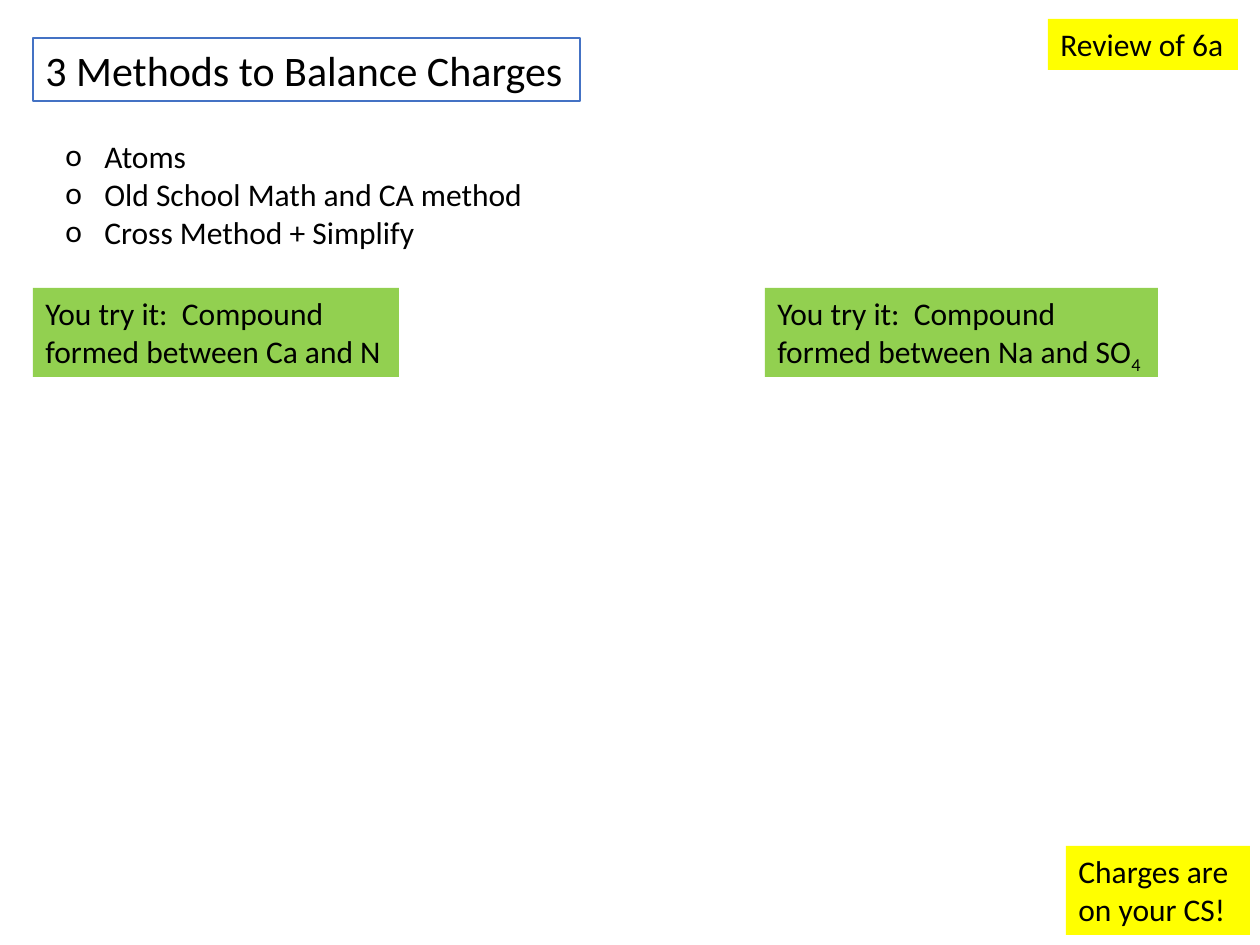
from lxml.etree import SubElement
from pptx import Presentation
from pptx.dml.color import RGBColor
from pptx.enum.shapes import MSO_SHAPE
from pptx.enum.text import MSO_ANCHOR, MSO_AUTO_SIZE, PP_ALIGN
from pptx.oxml.ns import qn
from pptx.util import Pt

PX = 914400 / 126


def color(value):
    return RGBColor.from_string(value)


def add_text(page, text, at, size=18, fill=None, line=None, wrap=False, bullet=None, subscript=None):
    bounds = [round(length * PX) for length in at]
    if fill:
        box = page.shapes.add_shape(MSO_SHAPE.RECTANGLE, *bounds)
        box.shadow.inherit = False
        box.fill.solid()
        box.fill.fore_color.rgb = color(fill)
        if line:
            box.line.color.rgb = color(line)
            box.line.width = Pt(1)
        else:
            box.line.fill.background()
    else:
        box = page.shapes.add_textbox(*bounds)
    frame = box.text_frame
    frame.text = text
    frame.word_wrap = wrap
    frame.auto_size = MSO_AUTO_SIZE.SHAPE_TO_FIT_TEXT
    frame.vertical_anchor = MSO_ANCHOR.TOP
    if subscript:
        span = frame.paragraphs[-1].add_run()
        span.text = subscript
        span._r.get_or_add_rPr().set("baseline", "-25000")
    for para in frame.paragraphs:
        para.alignment = PP_ALIGN.LEFT
        if bullet:
            properties = para._p.get_or_add_pPr()
            indent = round(39 * PX)
            properties.set("marL", str(indent))
            properties.set("indent", str(-indent))
            SubElement(properties, qn("a:buFont")).set("typeface", "Calibri")
            SubElement(properties, qn("a:buChar")).set("char", bullet)
        for span in para.runs:
            span.font.name = "Calibri"
            span.font.size = Pt(size)
            span.font.color.rgb = color("000000")


deck = Presentation()
deck.slide_width = round(1260 * PX)
deck.slide_height = round(945 * PX)
page = deck.slides.add_slide(deck.slide_layouts[6])

add_text(page, "3 Methods to Balance Charges", (33, 38, 547, 63), size=24, fill="FFFFFF", line="4472C4")
add_text(page, "Atoms\nOld School Math and CA method\nCross Method + Simplify", (53, 131, 488, 127), bullet="o")

for text, at in [
    ("Review of 6a", (1048, 19, 190, 51)),
    ("Charges are\non your CS!", (1066, 846, 184, 89)),
]:
    add_text(page, text, at, fill="FFFF00")

for text, subscript, left, width in [
    ("Ca and N", None, 33, 366),
    ("Na and SO", "4", 765, 393),
]:
    add_text(page, f"You try it:  Compound formed between {text}", (left, 288, width, 89),
             fill="92D050", wrap=True, subscript=subscript)

deck.save("out.pptx")
